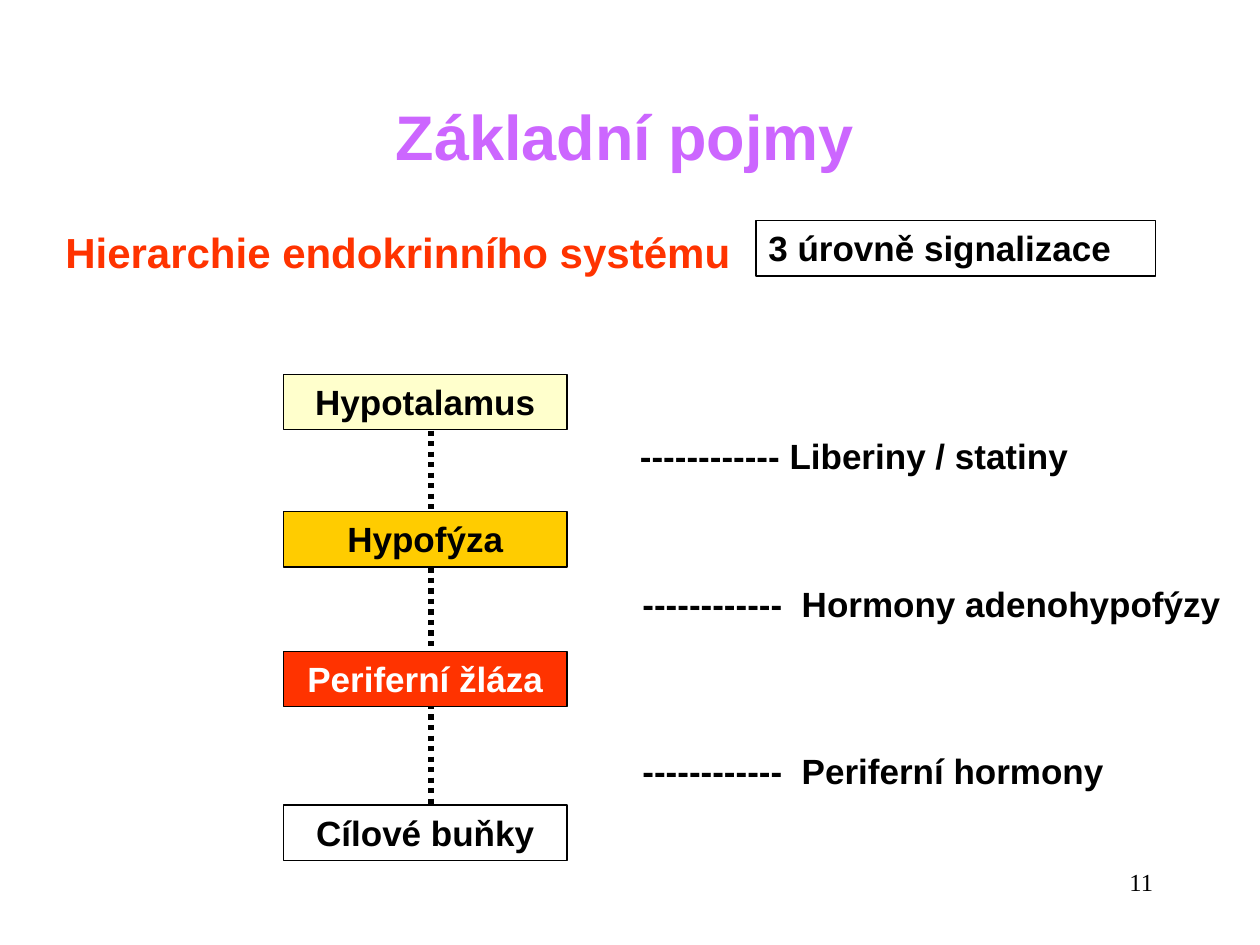
from lxml import etree
from pptx import Presentation
from pptx.dml.color import RGBColor
from pptx.enum import dml, shapes, text
from pptx.oxml.ns import qn
from pptx.util import Inches, Pt

INK = {
    "black": "000000", "white": "FFFFFF", "violet": "CC66FF",
    "red": "FF3300", "gold": "FFCC00", "cream": "FFFFCC",
}
LEFT, WIDE, HIGH = 2.25, 2.25, 0.44   # column of level boxes
AXIS = 3.42                           # dotted line behind them

LEVELS = [
    ("Hypotalamus", 2.97, "cream", "black"),
    ("Hypofýza", 4.06, "gold", "black"),
    ("Periferní žláza", 5.17, "red", "white"),
    ("Cílové buňky", 6.39, "white", "black"),
]
SIGNALS = [
    ("------------ Liberiny / statiny", 4.98, 3.4),
    ("------------  Hormony adenohypofýzy", 5, 4.57),
    ("------------  Periferní hormony", 5, 5.9),
]


def tint(name):
    return RGBColor.from_string(INK[name])


def write(shape, words, size, ink="black", align="LEFT", face="Arial", bold=True):
    frame = shape.text_frame
    frame.text = words
    frame.word_wrap = True
    frame.vertical_anchor = text.MSO_ANCHOR.TOP
    line = frame.paragraphs[0]
    line.alignment = text.PP_ALIGN[align]
    font = line.runs[0].font
    font.name, font.size, font.bold = face, Pt(size), bold
    font.color.rgb = tint(ink)


def label(slide, words, spot, size, **look):
    box = slide.shapes.add_textbox(*map(Inches, spot))
    write(box, words, size, **look)


def frame_box(slide, words, spot, fill=None, **look):
    box = slide.shapes.add_shape(shapes.MSO_SHAPE.RECTANGLE, *map(Inches, spot))
    box.shadow.inherit = False
    if fill:
        box.fill.solid()
        box.fill.fore_color.rgb = tint(fill)
    else:
        box.fill.background()
    box.line.color.rgb = tint("black")
    box.line.width = Pt(0.75)
    write(box, words, 20, **look)


def dots(slide, x, top, end):
    line = slide.shapes.add_connector(
        shapes.MSO_CONNECTOR.STRAIGHT, *map(Inches, (x, top, x, end)))
    line.line.color.rgb = tint("black")
    line.line.width = Pt(3)
    line.line.dash_style = dml.MSO_LINE.ROUND_DOT
    etree.SubElement(line._element.spPr, qn("a:effectLst"))


def main():
    deck = Presentation()
    deck.slide_width, deck.slide_height = Inches(10), Inches(7.5)
    slide = deck.slides.add_slide(deck.slide_layouts[5])

    # Title and heading row
    title = slide.shapes.title
    title.left, title.top, title.width, title.height = map(
        Inches, (3.04, 0.72, 3.84, 0.7))
    write(title, "Základní pojmy", 36, ink="violet", align="CENTER")
    title.text_frame.word_wrap = False
    label(slide, "Hierarchie endokrinního systému", (0.42, 1.75, 8.67, 0.5),
          24, ink="red")
    frame_box(slide, "3 úrovně signalizace", (6, 1.75, 3.17, HIGH))

    # Levels of the hierarchy on a dotted line
    dots(slide, AXIS, 3.25, 6.42)
    for words, top, fill, ink in LEVELS:
        frame_box(slide, words, (LEFT, top, WIDE, HIGH), fill,
                  ink=ink, align="CENTER")

    # Signals between levels
    for words, left, top in SIGNALS:
        label(slide, words, (left, top, 10 - left, 0.43), 20)

    # Page number
    label(slide, "11", (7.17, 6.83, 2.08, 0.5), 14, align="RIGHT",
          face="Times New Roman", bold=False)
    deck.save("out.pptx")


if __name__ == "__main__":
    main()
